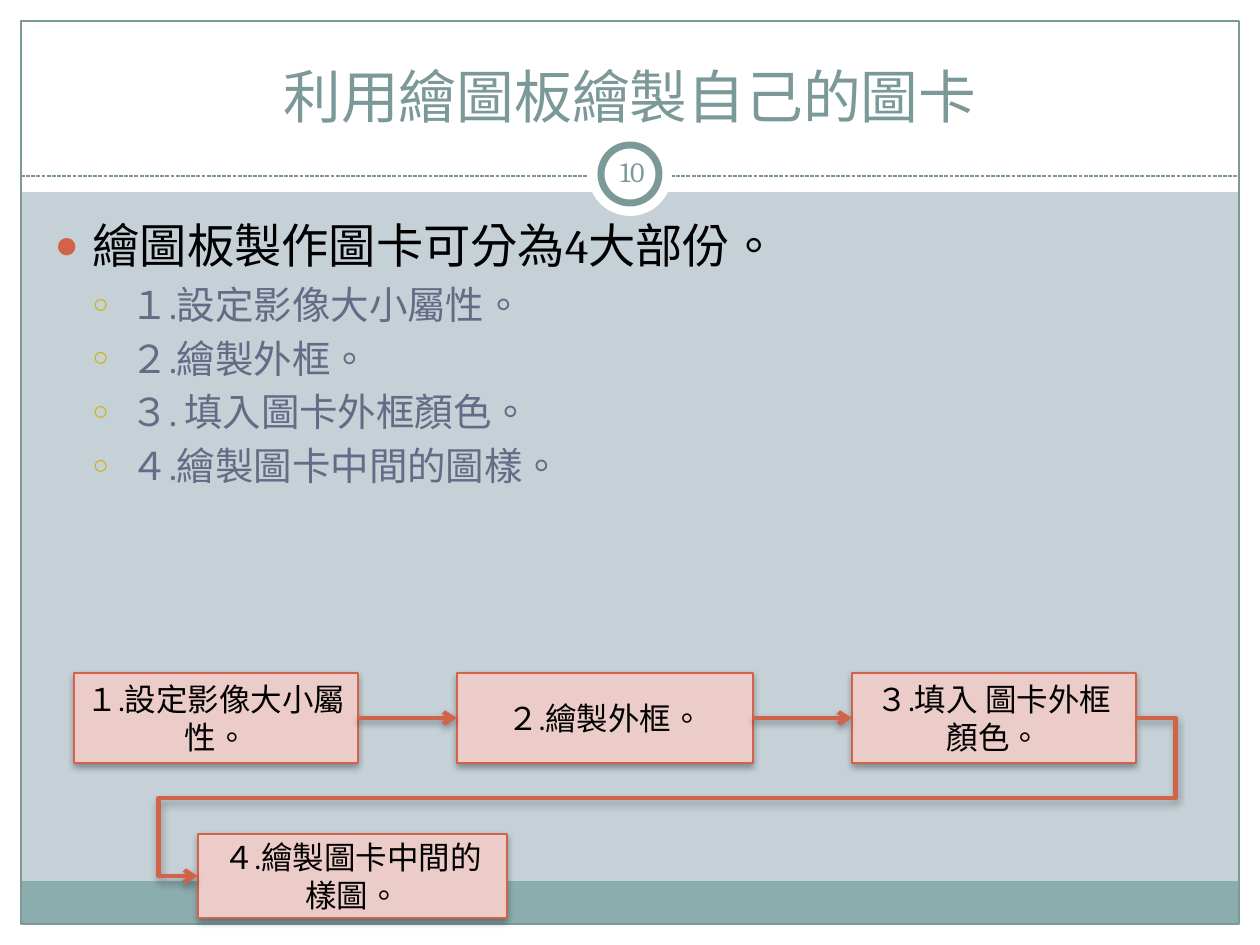
from dataclasses import dataclass

from lxml.etree import SubElement
from pptx import Presentation
from pptx.dml.color import RGBColor
from pptx.enum.dml import MSO_LINE
from pptx.enum.shapes import MSO_CONNECTOR, MSO_SHAPE
from pptx.enum.text import MSO_ANCHOR, MSO_AUTO_SIZE, PP_ALIGN
from pptx.oxml.ns import qn
from pptx.util import Emu, Pt

WIDTH, HEIGHT = 1260, 945
MARGIN = 21


@dataclass(frozen=True)
class Theme:
    font: str = "Cambria"
    language: str = "zh-TW"
    background: str = "C5D1D7"
    white: str = "FFFFFF"
    black: str = "000000"
    slate: str = "7C999A"
    footer: str = "8CADAE"
    accent: str = "D16349"
    step_fill: str = "ECCCC9"
    sub_text: str = "646B86"
    sub_bullet: str = "CCB400"
    title_size: int = 33
    lead_size: int = 27
    sub_size: int = 22
    step_size: int = 18
    number_size: int = 16


def px(length):
    return Emu(round(length * 914400 / 126))


def add_text(para, text, *, theme, size, color, align=None, before=None):
    para.alignment = align
    if before is not None:
        para.space_before = Pt(before)
    span = para.add_run()
    span.text = text
    span.font.name = theme.font
    span.font.size = Pt(size)
    span.font.color.rgb = RGBColor.from_string(color)
    span._r.get_or_add_rPr().set("lang", theme.language)


def add_bullet(para, symbol, color, percent, indent):
    properties = para._p.get_or_add_pPr()
    properties.set("marL", str(px(indent)))
    properties.set("indent", str(-px(38)))
    bullet_color = SubElement(properties, qn("a:buClr"))
    SubElement(bullet_color, qn("a:srgbClr"), val=color)
    SubElement(properties, qn("a:buSzPct"), val=str(percent * 1000))
    SubElement(properties, qn("a:buChar"), char=symbol)


def cast_shadow(effects, color):
    shadow = SubElement(effects, qn("a:outerShdw"), blurRad=str(Pt(4)),
                        dist=str(Pt(2)), dir="5400000", rotWithShape="0")
    shade = SubElement(shadow, qn("a:srgbClr"), val=color)
    SubElement(shade, qn("a:alpha"), val="35000")


class SlideBuilder:
    def __init__(self, page, theme):
        self.page = page
        self.theme = theme
        fill = page.background.fill
        fill.solid()
        fill.fore_color.rgb = RGBColor.from_string(theme.background)

    def shape(self, kind, bounds, fill=None, line=None, weight=0.75):
        box = self.page.shapes.add_shape(kind, *map(px, bounds))
        box.shadow.inherit = False
        if fill:
            box.fill.solid()
            box.fill.fore_color.rgb = RGBColor.from_string(fill)
        else:
            box.fill.background()
        if line:
            box.line.color.rgb = RGBColor.from_string(line)
            box.line.width = Pt(weight)
        else:
            box.line.fill.background()
        return box

    def line(self, start, end, color, weight, kind=MSO_CONNECTOR.STRAIGHT):
        line = self.page.shapes.add_connector(kind, *map(px, start + end))
        line.line.color.rgb = RGBColor.from_string(color)
        line.line.width = Pt(weight)
        effects = SubElement(line.element.spPr, qn("a:effectLst"))
        return line, effects

    def placeholder(self, index, bounds):
        holder = self.page.placeholders[index]
        holder.left, holder.top, holder.width, holder.height = map(px, bounds)
        holder.element.getparent().append(holder.element)
        holder.text_frame.auto_size = MSO_AUTO_SIZE.NONE
        return holder.text_frame

    def title(self, text, bounds):
        frame = self.placeholder(0, bounds)
        frame.vertical_anchor = MSO_ANCHOR.BOTTOM
        add_text(frame.paragraphs[0], text, theme=self.theme, align=PP_ALIGN.CENTER,
                 size=self.theme.title_size, color=self.theme.slate)

    def outline(self, lead, items, bounds):
        theme = self.theme
        frame = self.placeholder(1, bounds)
        frame.vertical_anchor = MSO_ANCHOR.TOP
        para = frame.paragraphs[0]
        add_bullet(para, "●", theme.accent, 85, 38)
        add_text(para, lead, theme=theme, size=theme.lead_size, color=theme.black, before=0)
        for item in items:
            para = frame.add_paragraph()
            para.level = 1
            add_bullet(para, "○", theme.sub_bullet, 70, 76)
            add_text(para, item, theme=theme, size=theme.sub_size, color=theme.sub_text,
                     before=theme.sub_size * 0.2)

    def page_number(self, text, bounds):
        frame = self.page.shapes.add_textbox(*map(px, bounds)).text_frame
        frame.word_wrap = True
        frame.vertical_anchor = MSO_ANCHOR.MIDDLE
        frame.margin_left = frame.margin_right = px(6)
        frame.margin_top = frame.margin_bottom = px(6)
        add_text(frame.paragraphs[0], text, theme=self.theme, align=PP_ALIGN.CENTER,
                 size=self.theme.number_size, color=self.theme.slate)

    def step(self, text, bounds):
        theme = self.theme
        box = self.shape(MSO_SHAPE.RECTANGLE, bounds, theme.step_fill, theme.accent)
        cast_shadow(box.element.spPr.find(qn("a:effectLst")), theme.black)
        frame = box.text_frame
        frame.word_wrap = True
        frame.vertical_anchor = MSO_ANCHOR.MIDDLE
        add_text(frame.paragraphs[0], text, theme=theme, align=PP_ALIGN.CENTER,
                 size=theme.step_size, color=theme.black)
        return box

    def arrow(self, source, target, kind=MSO_CONNECTOR.STRAIGHT):
        arrow, effects = self.line((0, 0), (0, 0), self.theme.accent, 2.5, kind)
        arrow.begin_connect(source, 3)
        arrow.end_connect(target, 1)
        cast_shadow(effects, self.theme.black)
        outline = arrow.element.spPr.find(qn("a:ln"))
        SubElement(outline, qn("a:tailEnd"), type="arrow")
        return arrow

    def wrapping_arrow(self, source, target):
        arrow = self.arrow(source, target, MSO_CONNECTOR.ELBOW)
        geometry = arrow.element.spPr.find(qn("a:prstGeom"))
        geometry.set("prst", "bentConnector5")
        guides = geometry.find(qn("a:avLst"))
        for number, value in enumerate((-4200, 50800, 104200), 1):
            SubElement(guides, qn("a:gd"), name=f"adj{number}", fmla=f"val {value}")


def draw_frame(slide):
    theme = slide.theme
    right, bottom = WIDTH - MARGIN, HEIGHT - MARGIN
    for bounds in ((0, bottom, WIDTH, MARGIN), (0, 0, WIDTH, 192),
                   (0, 0, MARGIN, HEIGHT), (right, 0, MARGIN, HEIGHT)):
        slide.shape(MSO_SHAPE.RECTANGLE, bounds, theme.white)
    slide.shape(MSO_SHAPE.RECTANGLE, (MARGIN, 881, right - MARGIN, 43), theme.footer)
    slide.shape(MSO_SHAPE.RECTANGLE, (MARGIN, MARGIN, right - MARGIN, bottom - MARGIN),
                line=theme.slate)
    divider, _ = slide.line((MARGIN, 176), (right, 176), theme.slate, 0.75)
    divider.line.dash_style = MSO_LINE.SQUARE_DOT
    slide.shape(MSO_SHAPE.OVAL, (588, 132, 84, 84), theme.white)
    slide.shape(MSO_SHAPE.OVAL, (601, 145, 58, 58), theme.white, theme.slate, 4)


def main():
    deck = Presentation()
    deck.slide_width, deck.slide_height = px(WIDTH), px(HEIGHT)
    slide = SlideBuilder(deck.slides.add_slide(deck.slide_layouts[1]), Theme())
    draw_frame(slide)
    slide.title("利用繪圖板繪製自己的圖卡", (42, 31, 1176, 105))
    slide.page_number("10", (601, 141, 63, 61))
    slide.outline("繪圖板製作圖卡可分為4大部份。",
                  ("１.設定影像大小屬性。", "２.繪製外框。",
                   "３. 填入圖卡外框顏色。", "４.繪製圖卡中間的圖樣。"),
                  (42, 210, 1172, 630))
    first, second, third, fourth = [slide.step(text, bounds) for text, bounds in (
        ("１.設定影像大小屬性。", (74, 673, 284, 90)),
        ("２.繪製外框。", (457, 673, 296, 90)),
        ("３.填入 圖卡外框顏色。", (852, 673, 284, 90)),
        ("４.繪製圖卡中間的樣圖。", (198, 834, 309, 84)),
    )]
    slide.arrow(first, second)
    slide.arrow(second, third)
    slide.wrapping_arrow(third, fourth)
    deck.save("out.pptx")


if __name__ == "__main__":
    main()
